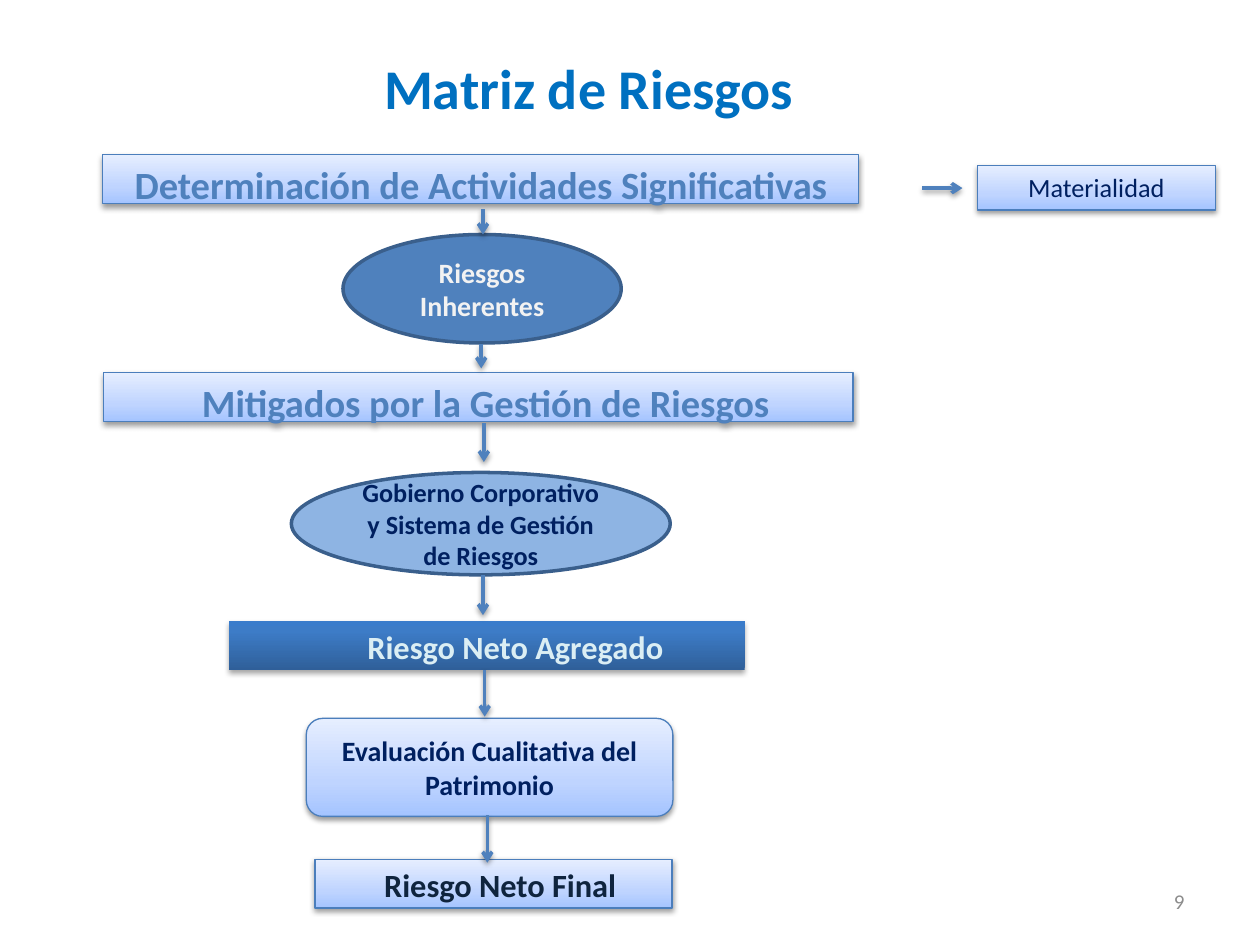
from lxml import etree
from pptx import Presentation
from pptx.dml.color import RGBColor
from pptx.enum.shapes import MSO_CONNECTOR, MSO_SHAPE
from pptx.enum.text import MSO_ANCHOR, MSO_AUTO_SIZE, PP_ALIGN
from pptx.oxml.ns import qn
from pptx.util import Pt

RECT, ROUNDED, OVAL = MSO_SHAPE.RECTANGLE, MSO_SHAPE.ROUNDED_RECTANGLE, MSO_SHAPE.OVAL
STRAIGHT = MSO_CONNECTOR.STRAIGHT
TOP, MIDDLE = MSO_ANCHOR.TOP, MSO_ANCHOR.MIDDLE
LEFT, CENTER, RIGHT = PP_ALIGN.LEFT, PP_ALIGN.CENTER, PP_ALIGN.RIGHT
FIT_SHAPE = MSO_AUTO_SIZE.SHAPE_TO_FIT_TEXT
TITLE_ONLY = 5

BLUE, NAVY = "4F81BD", "002060"
# Gradient stops run from the bottom edge to the top edge
PALE = [(0, "A4C4FF"), (35, "BFD4FF"), (100, "E6EEFF")]
DEEP = [(0, "2F5F99"), (80, "3D7CC7"), (100, "3A7CCB")]


def color(value):
    return RGBColor.from_string(value)


def add_element(parent, tag, **attributes):
    element = etree.SubElement(parent, qn(tag))
    for name, value in attributes.items():
        element.set(name, str(value))
    return element


class Page:
    font = "Calibri"

    def __init__(self, deck):
        self.slide = deck.slides.add_slide(deck.slide_layouts[TITLE_ONLY])

    def set_text(self, box, text, size, ink, bold=True, align=CENTER, anchor=MIDDLE, indent=0):
        frame = box.text_frame
        frame.word_wrap = True
        frame.vertical_anchor = anchor
        frame.text = text
        para = frame.paragraphs[0]
        para.alignment = align
        if indent:
            para._p.get_or_add_pPr().set("marL", str(Pt(indent)))
        span = para.runs[0].font
        span.name, span.size, span.bold = self.font, Pt(size), bold
        span.color.rgb = color(ink)

    def title(self, text, place, size, ink):
        box = self.slide.shapes.title
        box.left, box.top, box.width, box.height = map(Pt, place)
        self.set_text(box, text, size, ink)

    def label(self, text, place, size, ink, **style):
        box = self.slide.shapes.add_textbox(*map(Pt, place))
        self.set_text(box, text, size, ink, **style)

    def shadow(self, shape, opacity=38, distance=1.6):
        properties = shape._element.spPr
        effects = properties.find(qn("a:effectLst"))
        if effects is None:
            effects = add_element(properties, "a:effectLst")
        outer = add_element(effects, "a:outerShdw", blurRad=Pt(3.1), dist=Pt(distance),
                            dir=90 * 60000, rotWithShape=0)
        black = add_element(outer, "a:srgbClr", val="000000")
        add_element(black, "a:alpha", val=opacity * 1000)

    def gradient(self, shape, stops):
        shape.fill.gradient()
        shape.fill.gradient_angle = 90
        stop_list = shape._element.spPr.find(".//" + qn("a:gsLst"))
        for old in list(stop_list):
            stop_list.remove(old)
        for position, value in stops:
            stop = add_element(stop_list, "a:gs", pos=position * 1000)
            add_element(stop, "a:srgbClr", val=value)

    def shape(self, kind, place, line, weight):
        shape = self.slide.shapes.add_shape(kind, *map(Pt, place))
        shape.shadow.inherit = False
        if line:
            shape.line.color.rgb = color(line)
            shape.line.width = Pt(weight)
        else:
            shape.line.fill.background()
        return shape

    def panel(self, text, place, size, ink, kind=RECT, stops=PALE, line="4B7EBC",
              opacity=38, distance=1.6, **style):
        shape = self.shape(kind, place, line, 0.75)
        self.gradient(shape, stops)
        self.shadow(shape, opacity, distance)
        self.set_text(shape, text, size, ink, **style)
        return shape

    def oval(self, text, place, size, ink, fill):
        shape = self.shape(OVAL, place, "3A5F8C", 2)
        shape.fill.solid()
        shape.fill.fore_color.rgb = color(fill)
        self.set_text(shape, text, size, ink)

    def arrow(self, *ends):
        arrow = self.slide.shapes.add_connector(STRAIGHT, *map(Pt, ends))
        arrow.line.color.rgb = color(BLUE)
        arrow.line.width = Pt(2)
        outline = arrow._element.spPr.find(qn("a:ln"))
        add_element(outline, "a:tailEnd", type="arrow")
        self.shadow(arrow)


def main():
    deck = Presentation()
    deck.slide_width, deck.slide_height = Pt(720), Pt(540)
    page = Page(deck)
    page.title("Matriz de Riesgos", (36.5, 22.5, 600, 54.5), 32, "0070C0")

    # Main flow, top to bottom
    page.panel("Determinación de Actividades Significativas", (58.5, 88.5, 432, 28),
               22, BLUE, anchor=TOP, indent=0.7)
    page.oval("Riesgos Inherentes", (196, 134, 159, 62), 16, "F2F2F2", BLUE)
    page.panel("Mitigados por la Gestión de Riesgos", (59, 213, 428.5, 28),
               22, BLUE, anchor=TOP, indent=8.6)
    page.oval("Gobierno Corporativo y Sistema de Gestión de Riesgos",
              (166.5, 270, 216.5, 58.5), 15, NAVY, "8EB4E3")
    page.panel("Riesgo Neto Agregado", (131, 355, 294.5, 28), 18.5, "DBEEF4", stops=DEEP,
               line=None, opacity=35, distance=1.8, anchor=TOP, indent=32.4)
    page.panel("Evaluación Cualitativa del Patrimonio", (175, 410.5, 209.5, 56),
               16, NAVY, kind=ROUNDED)
    page.panel("Riesgo Neto Final", (180, 491, 204, 28), 18.5, "0F243E",
               align=LEFT, anchor=TOP, indent=32.4)

    # Side note
    note = page.panel("Materialidad", (558.5, 94.5, 136, 25.5), 15, NAVY,
                      bold=False, anchor=TOP)
    note.text_frame.auto_size = FIT_SHAPE
    page.arrow(527, 107.5, 550, 107.5)

    # Arrows between the steps: x, start and end
    for x, start, end in [(276, 119.5, 134), (275, 196.5, 210.5), (276.5, 242, 264),
                          (276, 328.5, 351.5), (277, 383, 409.5), (278.5, 466, 493)]:
        page.arrow(x, start, x, end)

    # Page number
    page.label("9", (516, 500.5, 168, 28.5), 12, "8C8C8C", bold=False, align=RIGHT)

    deck.save("out.pptx")


if __name__ == "__main__":
    main()
